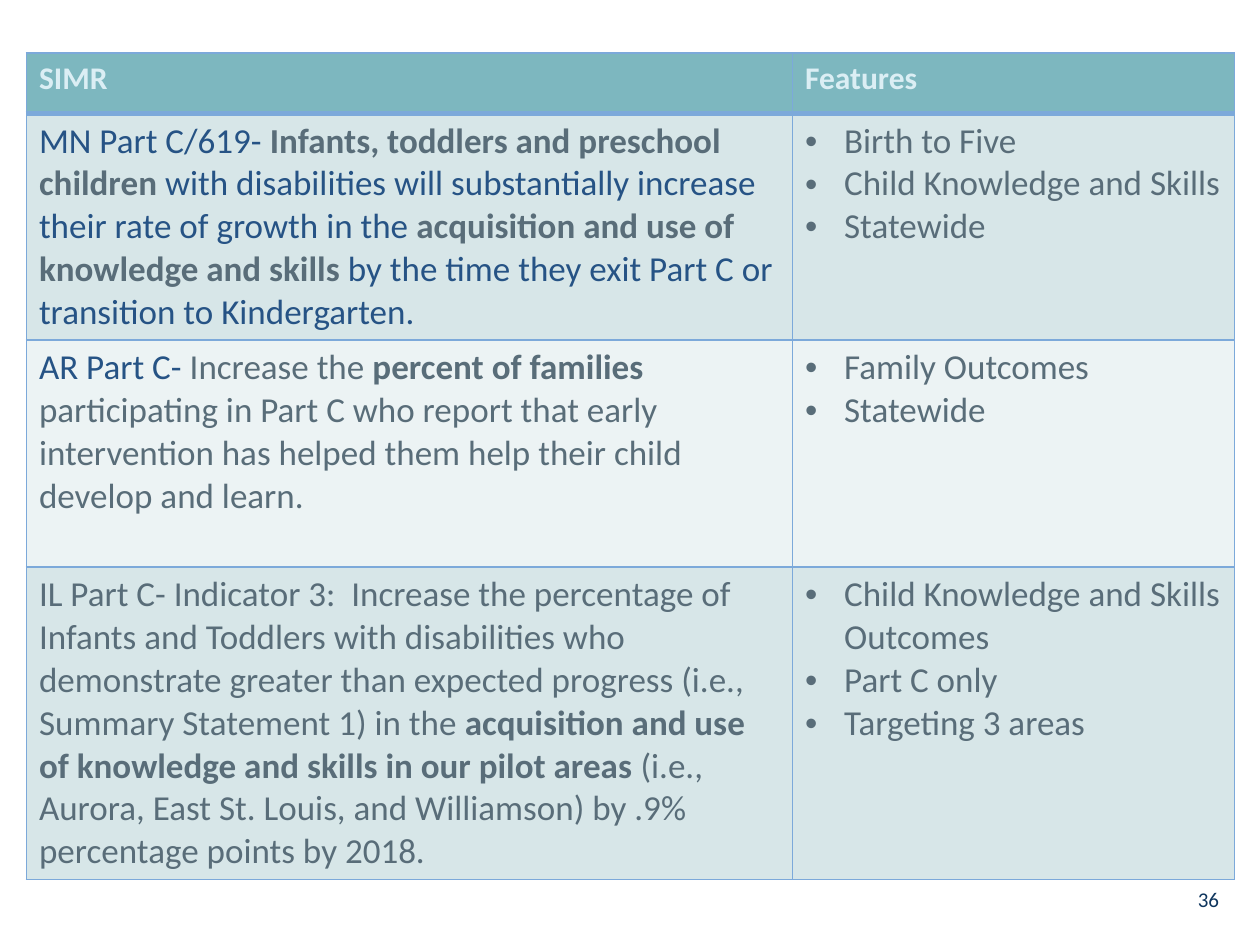
from dataclasses import dataclass

from lxml import etree
from pptx import Presentation
from pptx import util as u
from pptx.dml.color import RGBColor
from pptx.enum import text
from pptx.oxml import ns


@dataclass(frozen=True)
class Theme:
    font: str = "Calibri"
    header_size: int = 18
    body_size: int = 20
    number_size: int = 12
    header_fill: str = "7DB7BF"
    header_text: str = "DBEEF4"
    bands: tuple = ("D7E6E8", "ECF3F4")
    border: str = "7CA9DA"
    blue: str = "265385"
    grey: str = "596D79"
    number: str = "0F365E"
    indent: float = 3.1


THEME = Theme()
BLUE, GREY, BOLD = (THEME.blue, False), (THEME.grey, False), (THEME.grey, True)

HEADERS = ("SIMR", "Features")
STATES = [
    ([("MN Part C/619- ", BLUE),
      ("Infants, toddlers and preschool children ", BOLD),
      ("with disabilities will substantially increase their rate of growth in the ", BLUE),
      ("acquisition and use of knowledge and skills ", BOLD),
      ("by the time they exit Part C or transition to Kindergarten.", BLUE)],
     ["Birth to Five", "Child Knowledge and Skills", "Statewide"]),
    ([("AR Part C- ", BLUE),
      ("Increase the ", GREY),
      ("percent of families ", BOLD),
      ("participating in Part C who report that early intervention has helped "
       "them help their child develop and learn.", GREY)],
     ["Family Outcomes", "Statewide"]),
    ([("IL Part C- Indicator 3:  Increase the percentage of Infants and Toddlers "
       "with disabilities who demonstrate greater than expected progress (i.e., "
       "Summary Statement 1) in the ", GREY),
      ("acquisition and use of knowledge and skills in our pilot areas ", BOLD),
      ("(i.e., Aurora, East St. Louis, and Williamson) by .9% percentage points "
       "by 2018.", GREY)],
     ["Child Knowledge and Skills Outcomes", "Part C only", "Targeting 3 areas"]),
]


class Builder:
    """Lengths are cells of a square grid, 100 columns by 75 rows."""

    def __init__(self, theme):
        self.theme = theme
        self.deck = Presentation()
        self.deck.slide_width, self.deck.slide_height = u.Inches(10), u.Inches(7.5)
        self.page = self.deck.slides.add_slide(self.deck.slide_layouts[6])

    def grid(self, cells):
        return round(cells * self.deck.slide_width / 100)

    def style(self, font, size=None, color=None, bold=None):
        font.name = self.theme.font
        font.bold = bold
        if size:
            font.size = u.Pt(size)
        if color:
            font.color.rgb = RGBColor.from_string(color)

    def page_number(self, number, left, top, width, height):
        box = self.page.shapes.add_textbox(*map(self.grid, (left, top, width, height)))
        frame = box.text_frame
        frame.margin_left = frame.margin_right = 0
        frame.margin_top = frame.margin_bottom = 0
        frame.word_wrap = True
        frame.vertical_anchor = text.MSO_ANCHOR.BOTTOM
        para = frame.paragraphs[0]
        para.text = str(number)
        para.alignment = text.PP_ALIGN.RIGHT
        self.style(para.font, self.theme.number_size, self.theme.number)

    def table(self, left, top, columns, rows):
        """Add an unfilled table from its column widths and row heights."""
        frame = self.page.shapes.add_table(
            len(rows), len(columns),
            *map(self.grid, (left, top, sum(columns), sum(rows))))
        for column, width in zip(frame.table.columns, columns):
            column.width = self.grid(width)
        for row, height in zip(frame.table.rows, rows):
            row.height = self.grid(height)
        return frame.table

    def dress(self, cell, fill, top=1, bottom=1):
        """Fill a cell and draw its borders, with line widths in points."""
        props = cell._tc.get_or_add_tcPr()
        for side, width in (("L", 1), ("R", 1), ("T", top), ("B", bottom)):
            line = etree.SubElement(props, ns.qn(f"a:ln{side}"), w=str(u.Pt(width)))
            solid = etree.SubElement(line, ns.qn("a:solidFill"))
            etree.SubElement(solid, ns.qn("a:srgbClr"), val=self.theme.border)
        cell.fill.solid()
        cell.fill.fore_color.rgb = RGBColor.from_string(fill)

    def header(self, cell, words):
        self.dress(cell, self.theme.header_fill, bottom=3)
        cell.text = words
        self.style(cell.text_frame.paragraphs[0].font, self.theme.header_size,
                   self.theme.header_text, True)

    def statement(self, cell, spans):
        para = cell.text_frame.paragraphs[0]
        self.style(para.font, self.theme.body_size)
        for words, (color, bold) in spans:
            span = para.add_run()
            span.text = words
            self.style(span.font, self.theme.body_size, color, bold)

    def bullets(self, cell, items):
        cell.text = "\n".join(items)
        indent = self.grid(self.theme.indent)
        for para in cell.text_frame.paragraphs:
            self.style(para.font, self.theme.body_size, self.theme.grey, False)
            props = para._p.get_or_add_pPr()
            props.set("marL", str(indent))
            props.set("indent", str(-indent))
            props.insert(0, etree.Element(ns.qn("a:buFont"), typeface="Arial"))
            props.insert(1, etree.Element(ns.qn("a:buChar"), char="•"))


def main():
    slide = Builder(THEME)
    slide.page_number(36, 92.75, 70.4, 4, 2)
    table = slide.table(2.1, 4.2, (60.8, 35.1), (4.8, 18, 18, 24.8))
    for column, words in enumerate(HEADERS):
        slide.header(table.cell(0, column), words)
    for row, (spans, features) in enumerate(STATES, start=1):
        for column in range(len(HEADERS)):
            slide.dress(table.cell(row, column), THEME.bands[(row - 1) % 2],
                        top=3 if row == 1 else 1)
        slide.statement(table.cell(row, 0), spans)
        slide.bullets(table.cell(row, 1), features)
    slide.deck.save("out.pptx")


if __name__ == "__main__":
    main()
